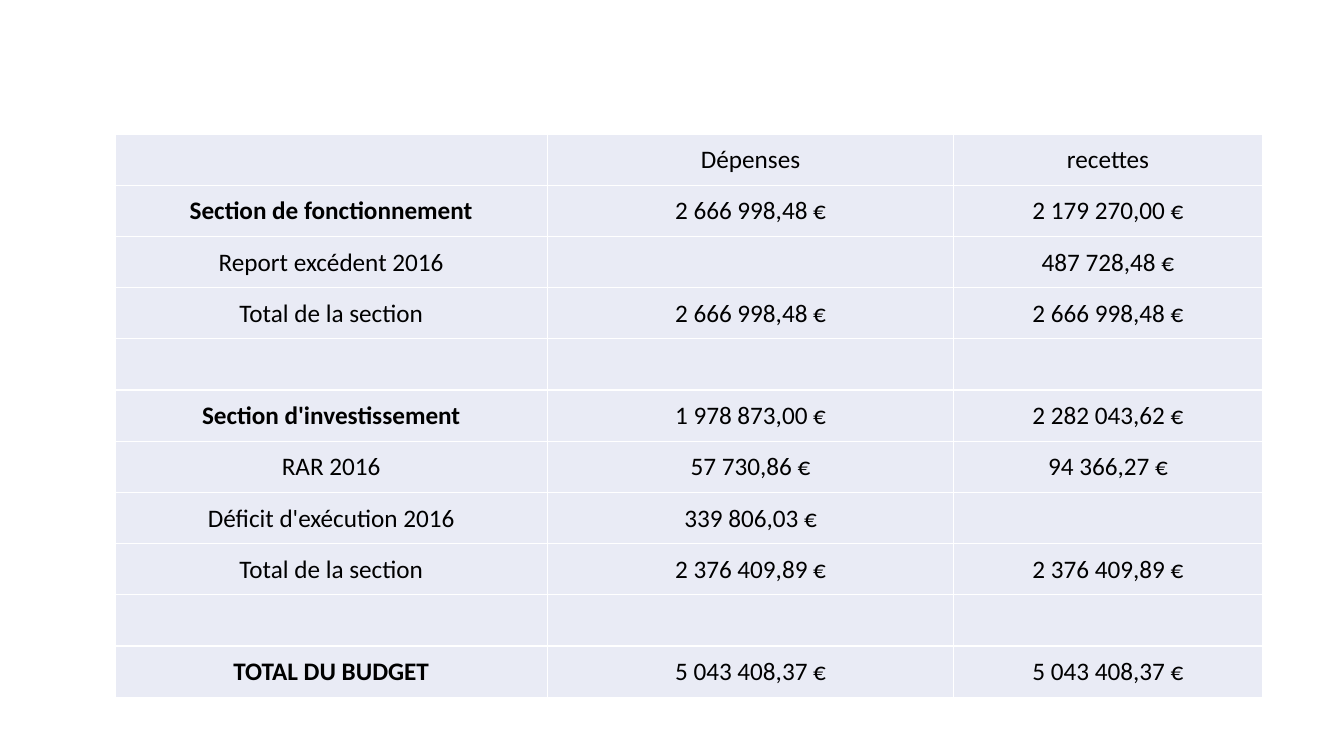
from lxml import etree
from pptx import Presentation
from pptx.dml.color import RGBColor
from pptx.enum.text import MSO_ANCHOR, PP_ALIGN
from pptx.oxml.ns import qn
from pptx.util import Inches, Pt

CENTER = PP_ALIGN.CENTER
MIDDLE = MSO_ANCHOR.MIDDLE
COLORS = {"cell": "E9EBF5", "border": "FFFFFF", "text": "000000"}
COLUMN_WIDTHS = [4.29, 4.03, 3.06]
TABLE_HEIGHT = 5.59
BUDGET_ROWS = [
    ["", "Dépenses", "recettes"],
    ["Section de fonctionnement", "2 666 998,48 €", "2 179 270,00 €"],
    ["Report excédent 2016", "", "487 728,48 €"],
    ["Total de la section", "2 666 998,48 €", "2 666 998,48 €"],
    ["", "", ""],
    ["Section d'investissement", "1 978 873,00 €", "2 282 043,62 €"],
    ["RAR 2016", "57 730,86 €", "94 366,27 €"],
    ["Déficit d'exécution 2016", "339 806,03 €", ""],
    ["Total de la section", "2 376 409,89 €", "2 376 409,89 €"],
    ["", "", ""],
    ["TOTAL DU BUDGET", "5 043 408,37 €", "5 043 408,37 €"],
]
BOLD_LABELS = {"Section de fonctionnement", "Section d'investissement", "TOTAL DU BUDGET"}
CELL_FORMAT = {
    "vertical_anchor": MIDDLE,
    "margin_left": Inches(0.01),
    "margin_top": Inches(0.01),
    "margin_right": Inches(0.01),
    "margin_bottom": Inches(0),
}
FONT_FORMAT = {"name": "Calibri", "size": Pt(18)}


def add_borders(cell):
    properties = cell._tc.get_or_add_tcPr()
    for side in ("a:lnL", "a:lnR", "a:lnT", "a:lnB"):
        line = etree.SubElement(properties, qn(side), w=str(Pt(1)))
        fill = etree.SubElement(line, qn("a:solidFill"))
        etree.SubElement(fill, qn("a:srgbClr"), val=COLORS["border"])


presentation = Presentation()
presentation.slide_width = Inches(13.33)
presentation.slide_height = Inches(7.5)
slide = presentation.slides.add_slide(presentation.slide_layouts[6])

table = slide.shapes.add_table(
    len(BUDGET_ROWS), len(COLUMN_WIDTHS),
    Inches(1.14), Inches(1.33), Inches(sum(COLUMN_WIDTHS)), Inches(TABLE_HEIGHT),
).table
table.first_row = False
table.horz_banding = False
for column, width in zip(table.columns, COLUMN_WIDTHS):
    column.width = Inches(width)

for row, values in zip(table.rows, BUDGET_ROWS):
    row.height = Inches(TABLE_HEIGHT / len(BUDGET_ROWS))
    for cell, value in zip(row.cells, values):
        add_borders(cell)
        cell.fill.solid()
        cell.fill.fore_color.rgb = RGBColor.from_string(COLORS["cell"])
        for name, setting in CELL_FORMAT.items():
            setattr(cell, name, setting)
        if not value:
            continue
        paragraph = cell.text_frame.paragraphs[0]
        paragraph.alignment = CENTER
        run = paragraph.add_run()
        run.text = value
        for name, setting in FONT_FORMAT.items():
            setattr(run.font, name, setting)
        run.font.bold = value in BOLD_LABELS
        run.font.color.rgb = RGBColor.from_string(COLORS["text"])

presentation.save("out.pptx")
